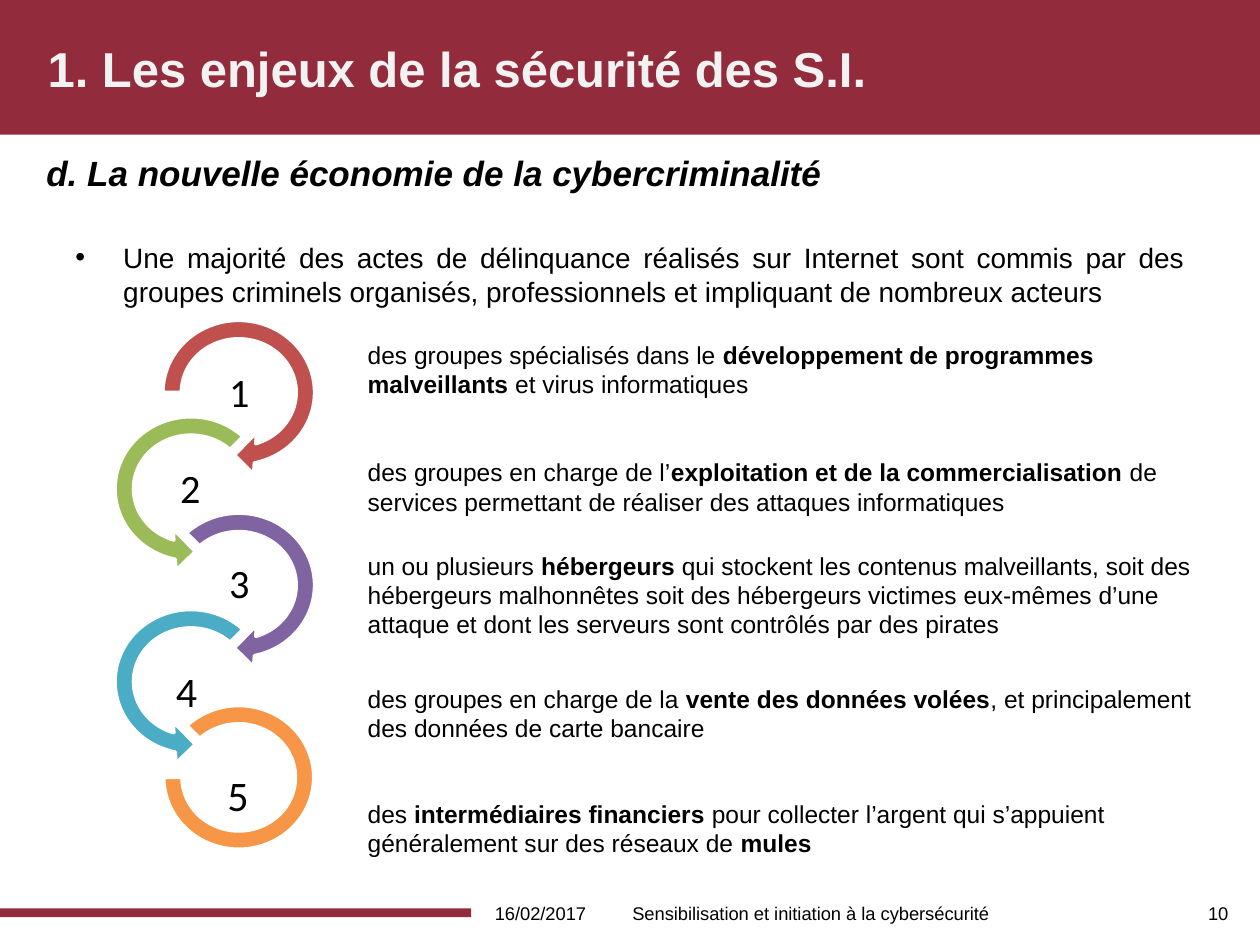
from lxml.etree import SubElement
from pptx import Presentation
from pptx.dml.color import RGBColor
from pptx.enum.shapes import MSO_SHAPE as Shape
from pptx.enum.text import MSO_ANCHOR as Anchor, PP_ALIGN as Align
from pptx.oxml.ns import qn
from pptx.util import Inches, Pt

BURGUNDY, WHITE, BLACK = "922B3C", "FFFFFF", "000000"

TITLE = "1. Les enjeux de la sécurité des S.I."
SUBTITLE = "d. La nouvelle économie de la cybercriminalité"
INTRO = ("Une majorité des actes de délinquance réalisés sur Internet sont commis par des "
         "groupes criminels organisés, professionnels et impliquant de nombreux acteurs")

# Box and alignment of each footer text
FOOTER = [
    ("16/02/2017", 3.74, 1.1, Align.CENTER),
    ("Sensibilisation et initiation à la cybersécurité", 4.92, 3.32, Align.LEFT),
    ("10", 9.49, 0.47, Align.LEFT),
]

# Top, width, height and runs; every second run is bold
ACTORS = [
    (2.65, 6.93, 0.57, ["des groupes spécialisés dans le ",
                        "développement de programmes malveillants",
                        " et virus informatiques"]),
    (3.58, 6.93, 0.57, ["des groupes en charge de l’",
                        "exploitation et de la commercialisation ",
                        "de services permettant de réaliser des attaques informatiques"]),
    (4.32, 7.1, 0.81, ["un ou plusieurs ", "hébergeurs",
                       " qui stockent les contenus malveillants, soit des hébergeurs malhonnêtes "
                       "soit des hébergeurs victimes eux-mêmes d’une attaque et dont les serveurs "
                       "sont contrôlés par des pirates"]),
    (5.38, 6.93, 0.57, ["des groupes en charge de la ", "vente des données volées",
                        ", et principalement des données de carte bancaire"]),
    (6.29, 6.93, 0.57, ["des ", "intermédiaires financiers ",
                        "pour collecter l’argent qui s’appuient généralement sur des réseaux de ",
                        "mules"]),
]

# Colour, start of the arc, then left, top and size of the number
LOOPS = [
    ("C0504D", 108, 1.51, 2.94, 23),
    ("9BBB59", 189, 1.12, 3.7, 23),
    ("8064A2", 135, 1.51, 4.46, 23),
    ("4BACC6", 189, 1.09, 5.32, 24),
    ("F79646", 108, 1.5, 6.14, 24),
]
LOOP_TOP, LOOP_STEP = 2.45, 0.765
RIGHT_LOOP, LEFT_LOOP = 1.2, 0.82


def rgb(value):
    return RGBColor.from_string(value)


def add_filled(slide, kind, box, fill, outline=None, adjustments=()):
    shape = slide.shapes.add_shape(kind, *map(Inches, box))
    shape.shadow.inherit = False
    for index, value in enumerate(adjustments):
        shape.adjustments[index] = value
    shape.fill.solid()
    shape.fill.fore_color.rgb = rgb(fill)
    if outline:
        shape.line.color.rgb = rgb(outline)
        shape.line.width = Pt(2)
    else:
        shape.line.fill.background()


def add_text(slide, box, runs, size, color=BLACK, font="Arial", align=Align.LEFT,
             anchor=Anchor.TOP, bold=False, italic=False, inset=None):
    """Add a text box whose runs alternate in weight, and return its paragraph."""
    frame = slide.shapes.add_textbox(*map(Inches, box)).text_frame
    frame.word_wrap = True
    frame.vertical_anchor = anchor
    if inset is not None:
        frame.margin_left = frame.margin_right = Inches(inset)
        frame.margin_top = frame.margin_bottom = Inches(inset)
    paragraph = frame.paragraphs[0]
    paragraph.alignment = align
    for index, words in enumerate(runs):
        run = paragraph.add_run()
        run.text = words
        run.font.name = font
        run.font.size = Pt(size)
        run.font.bold = bold or index % 2 == 1
        run.font.italic = italic
        run.font.color.rgb = rgb(color)
    return paragraph


def add_bullet(paragraph, indent):
    properties = paragraph._p.get_or_add_pPr()
    properties.set("marL", str(Inches(indent)))
    properties.set("indent", str(-Inches(indent)))
    SubElement(properties, qn("a:buFont"), typeface="Arial")
    SubElement(properties, qn("a:buChar"), char="•")


def add_loops(slide):
    last = len(LOOPS) - 1
    for index, (color, start, *_) in enumerate(LOOPS):
        top = LOOP_TOP + index * LOOP_STEP
        if index == last:
            add_filled(slide, Shape.BLOCK_ARC, (RIGHT_LOOP + 0.1, top + 0.09, 1.19, 1.14),
                       color, WHITE, (135, start, 0.127))
            continue
        on_left = index % 2 == 1
        kind = Shape.LEFT_CIRCULAR_ARROW if on_left else Shape.CIRCULAR_ARROW
        left, end = (LEFT_LOOP, 63) if on_left else (RIGHT_LOOP, 45)
        add_filled(slide, kind, (left, top, 1.39, 1.33), color, WHITE,
                   (0.11, 11.423, end, start, 0.125))
    for number, (_, _, left, top, size) in enumerate(LOOPS, 1):
        label = add_text(slide, (left, top, 0.78, 0.38), [str(number)], size, font="Calibri",
                         align=Align.CENTER, anchor=Anchor.MIDDLE, inset=0.02)
        label.line_spacing = 0.9


def main():
    deck = Presentation()
    deck.slide_width, deck.slide_height = Inches(10), Inches(7.5)
    slide = deck.slides.add_slide(deck.slide_layouts[6])

    add_filled(slide, Shape.RECTANGLE, (0, 0, 10, 1.07), BURGUNDY)
    add_filled(slide, Shape.RECTANGLE, (0, 7.21, 3.74, 0.07), BURGUNDY)
    add_text(slide, (0.28, 0.01, 9.53, 1.06), [TITLE], 28, "F2F2F2",
             anchor=Anchor.MIDDLE, bold=True)
    add_text(slide, (0.27, 1.15, 9.53, 0.63), [SUBTITLE], 20, bold=True, italic=True)
    intro = add_text(slide, (0.5, 1.86, 9, 0.64), [INTRO], 16, align=Align.JUSTIFY)
    add_bullet(intro, 0.38)

    add_loops(slide)
    for top, width, height, runs in ACTORS:
        add_text(slide, (2.82, top, width, height), runs, 14)
    for words, left, width, align in FOOTER:
        add_text(slide, (left, 7.05, width, 0.4), [words], 10.5, align=align,
                 anchor=Anchor.MIDDLE)
    deck.save("out.pptx")


if __name__ == "__main__":
    main()
